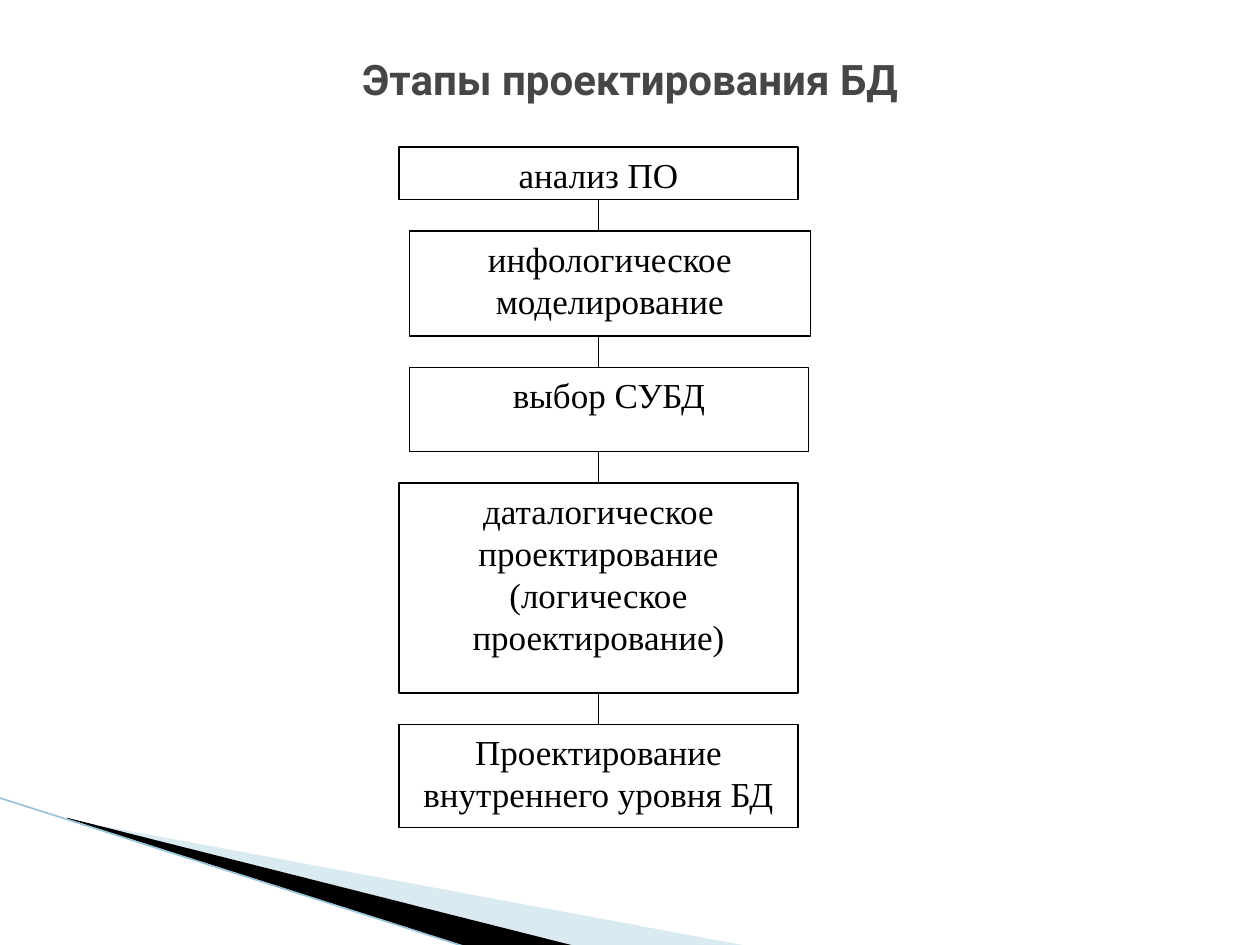
from dataclasses import dataclass

from lxml.etree import SubElement
from pptx import Presentation
from pptx.dml.color import RGBColor
from pptx.enum.shapes import MSO_CONNECTOR, MSO_SHAPE
from pptx.enum.text import MSO_ANCHOR, PP_ALIGN
from pptx.oxml.ns import qn
from pptx.util import Pt


@dataclass(frozen=True)
class Theme:
    white: str = "FFFFFF"
    black: str = "000000"
    title: str = "464646"
    pale: str = "A0CBDC"
    edge: str = "97C5D8"
    title_font: str = "Roboto"
    body_font: str = "Times New Roman"
    title_size: int = 24
    body_size: int = 20
    line: float = 0.75
    edge_line: float = 0.95


class Deck:
    def __init__(self, theme):
        self.theme = theme
        self.prs = Presentation()
        self.prs.slide_width, self.prs.slide_height = Pt(720), Pt(540)
        self.s = self.prs.slides.add_slide(self.prs.slide_layouts[6])

    def add_text(self, sp, paragraphs, anchor, color, **font):
        tf = sp.text_frame
        tf.word_wrap = True
        tf.vertical_anchor = anchor
        for i, text in enumerate(paragraphs):
            p = tf.add_paragraph() if i else tf.paragraphs[0]
            p.alignment = PP_ALIGN.CENTER
            r = p.add_run()
            r.text = text
            for name, value in font.items():
                setattr(r.font, name, value)
            r.font.color.rgb = RGBColor.from_string(color)

    def title(self, text, *bounds):
        t = self.theme
        sp = self.s.shapes.add_textbox(*map(Pt, bounds))
        self.add_text(sp, [text], MSO_ANCHOR.MIDDLE, t.title,
                      name=t.title_font, size=Pt(t.title_size), bold=True)

    def box(self, paragraphs, *bounds):
        t = self.theme
        sp = self.s.shapes.add_shape(MSO_SHAPE.RECTANGLE, *map(Pt, bounds))
        sp.shadow.inherit = False
        sp.fill.solid()
        sp.fill.fore_color.rgb = RGBColor.from_string(t.white)
        sp.line.color.rgb = RGBColor.from_string(t.black)
        sp.line.width = Pt(t.line)
        self.add_text(sp, paragraphs, MSO_ANCHOR.TOP, t.black,
                      name=t.body_font, size=Pt(t.body_size))
        return sp

    def line(self, x1, y1, x2, y2, color, width):
        sp = self.s.shapes.add_connector(
            MSO_CONNECTOR.STRAIGHT, *map(Pt, (x1, y1, x2, y2)))
        sp.line.color.rgb = RGBColor.from_string(color)
        sp.line.width = Pt(width)
        SubElement(sp.element.spPr, qn("a:effectLst"))
        return sp

    def wedge(self, points, color, opacity=100):
        (x, y), *rest = points
        builder = self.s.shapes.build_freeform(Pt(x), Pt(y))
        builder.add_line_segments([(Pt(a), Pt(b)) for a, b in rest])
        sp = builder.convert_to_shape()
        sp.shadow.inherit = False
        sp.fill.solid()
        sp.fill.fore_color.rgb = RGBColor.from_string(color)
        sp.line.fill.background()
        if opacity < 100:
            clr = sp.element.spPr.find(qn("a:solidFill"))[0]
            SubElement(clr, qn("a:alpha"), val=str(opacity * 1000))


STAGES = [
    (["анализ ПО"], 228, 228, 30),
    (["инфологическое моделирование"], 234, 229, 60),
    (["выбор СУБД"], 234, 228, 48),
    (["даталогическое проектирование", "(логическое проектирование)"],
     228, 228, 120),
    (["Проектирование внутреннего уровня БД"], 228, 228, 59),
]
TOP, GAP, AXIS = 84, 18, 342


def main():
    t = Theme()
    deck = Deck(t)
    deck.wedge([(39.6, 468.5), (428.4, 540.7), (328.3, 540.7), (39.6, 468)],
               t.pale, 40)
    deck.wedge([(38.2, 467.3), (329, 540.7), (267.8, 541.4), (38.9, 468)],
               t.black)
    deck.line(-0.7, 455.8, 267.1, 541.4, t.edge, t.edge_line)
    deck.title("Этапы проектирования БД", 24, 18, 672, 54)

    y, above, above_centered = TOP, None, False
    for paragraphs, x, w, h in STAGES:
        sp = deck.box(paragraphs, x, y, w, h)
        centered = x + w / 2 == AXIS
        if above:
            link = deck.line(AXIS, y - GAP, AXIS, y, t.black, t.line)
            if above_centered:
                link.begin_connect(above, 2)
            if centered:
                link.end_connect(sp, 0)
        above, above_centered = sp, centered
        y += h + GAP

    deck.prs.save("out.pptx")


if __name__ == "__main__":
    main()
